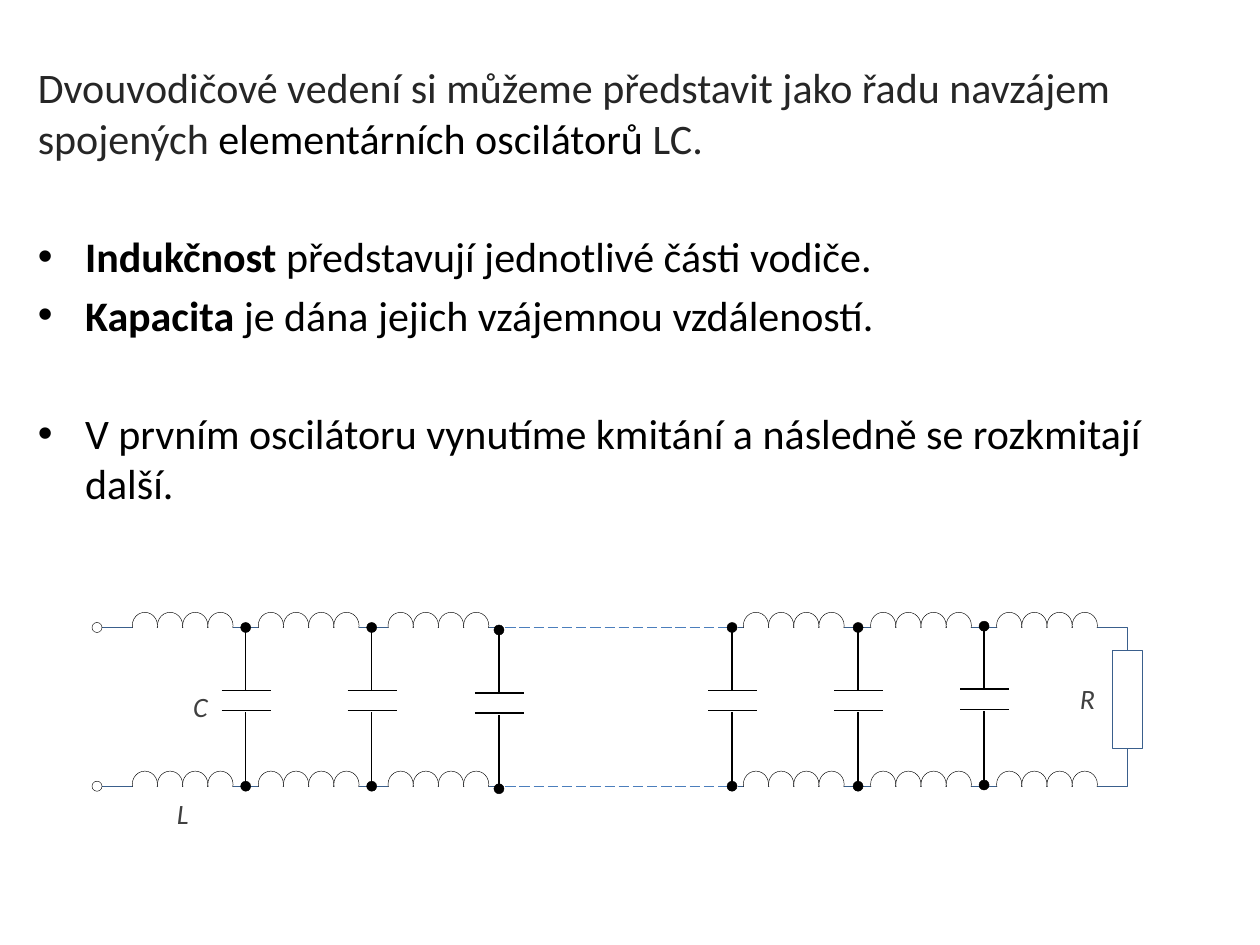
from lxml import etree
from pptx import Presentation
from pptx.dml.color import RGBColor
from pptx.enum.dml import MSO_LINE_DASH_STYLE as Dash
from pptx.enum.shapes import MSO_CONNECTOR, MSO_SHAPE as Shape
from pptx.enum.text import MSO_AUTO_SIZE, PP_ALIGN
from pptx.oxml.ns import qn
from pptx.util import Inches, Pt

BLACK, WHITE, BLUE, DASH_BLUE = "000000", "FFFFFF", "3A5F8C", "4B7EBC"
DARK, GREY = "262626", "404040"
RAIL_GAP = 1.26
COIL_XS = (1.05, 2.05, 3.08, 5.9, 6.91, 7.91)
# centre of each capacitor and its offset from the upper rail
CAPACITORS = ((1.95, 0), (2.95, 0), (3.96, 0.02), (5.81, 0), (6.81, 0), (7.81, -0.01))


def rgb(color):
    return RGBColor.from_string(color)


def add_shape(shapes, kind, box, fill, line, width):
    sp = shapes.add_shape(kind, *map(Inches, box))
    sp.shadow.inherit = False
    if fill:
        sp.fill.solid()
        sp.fill.fore_color.rgb = rgb(fill)
    else:
        sp.fill.background()
    sp.line.color.rgb = rgb(line)
    sp.line.width = Pt(width)
    return sp


def add_mask(shapes, *box):
    """White block that hides the part of the wiring behind it."""
    add_shape(shapes, Shape.RECTANGLE, box, WHITE, WHITE, 2)


def add_dot(shapes, x, y, fill):
    add_shape(shapes, Shape.OVAL, (x - 0.04, y - 0.04, 0.08, 0.08), fill, BLACK, 0.25)


def add_line(shapes, x1, y1, x2, y2, color=BLACK, width=1.0, dash=None):
    line = shapes.add_connector(MSO_CONNECTOR.STRAIGHT, *map(Inches, (x1, y1, x2, y2)))
    line.line.color.rgb = rgb(color)
    line.line.width = Pt(width)
    if dash:
        line.line.dash_style = dash
    etree.SubElement(line._element.spPr, qn("a:effectLst"))


def add_coil(shapes, x, rail_y):
    top = rail_y - 0.12
    for i in range(4):
        add_shape(shapes, Shape.OVAL, (x + 0.2 * i, top, 0.2, 0.21), WHITE, BLACK, 0.25)
    add_mask(shapes, x - 0.01, top + 0.14, 0.87, 0.11)


def add_capacitor(shapes, x, y):
    for dot_y in (y, y + RAIL_GAP):
        add_dot(shapes, x, dot_y, BLACK)
    add_line(shapes, x, y + 0.03, x, y + 1.28, width=0.75)
    add_mask(shapes, x - 0.08, y + 0.51, 0.19, 0.15)
    for plate_y in (y + 0.5, y + 0.66):
        add_line(shapes, x - 0.19, plate_y, x + 0.2, plate_y)


def add_label(shapes, text, x, y):
    tf = shapes.add_textbox(*map(Inches, (x, y, 0.68, 0.63))).text_frame
    tf.word_wrap = False
    p = tf.paragraphs[0]
    p.text = text
    p.alignment = PP_ALIGN.CENTER
    p.line_spacing = 1.5
    p.space_before = Pt(5.8)
    p.font.name, p.font.size, p.font.italic = "Calibri", Pt(16), True
    p.font.color.rgb = rgb(GREY)


def add_line_model(slide, x, y):
    """Ladder of LC cells; x is the left end of the rails, y the upper rail."""
    shapes = slide.shapes.add_group_shape().shapes
    rails = (y, y + RAIL_GAP)
    add_shape(shapes, Shape.RECTANGLE, (x, y, 8.27, RAIL_GAP), None, BLUE, 0.5)
    add_mask(shapes, x - 0.17, y - 0.03, 0.24, 1.39)
    for rail_y in rails:
        add_dot(shapes, x + 0.09, rail_y, WHITE)
        for coil_x in COIL_XS:
            add_coil(shapes, x + coil_x - 0.68, rail_y)
    add_shape(shapes, Shape.RECTANGLE, (x + 8.15, y + 0.18, 0.24, 0.78), WHITE, BLUE, 0.5)
    add_mask(shapes, x + 3.31, y - 0.06, 1.85, 1.41)
    for rail_y in rails:
        add_line(shapes, x + 3.33, rail_y, x + 5.14, rail_y, DASH_BLUE, 0.75, Dash.LONG_DASH)
    for cap_x, dy in CAPACITORS:
        add_capacitor(shapes, x + cap_x - 0.68, y + dy)
    for text, dx, dy in (("R", 7.61, 0.25), ("L", 0.43, 1.16), ("C", 0.57, 0.31)):
        add_label(shapes, text, x + dx, y + dy)


def fill_body(sp, left, top, width, height):
    sp.left, sp.top, sp.width, sp.height = map(Inches, (left, top, width, height))
    tf = sp.text_frame
    tf.auto_size = MSO_AUTO_SIZE.NONE
    # space before, then runs of (text, colour, bold)
    paragraphs = (
        (4.8, (("Dvouvodičové vedení si můžeme představit jako řadu navzájem spojených ", DARK, False),
               ("elementárních oscilátorů ", BLACK, False), ("LC.", DARK, False))),
        (38.8, (("Indukčnost ", BLACK, True),
                ("představují jednotlivé části vodiče.", BLACK, False))),
        (4.8, (("Kapacita ", BLACK, True),
               ("je dána jejich vzájemnou vzdáleností.", BLACK, False))),
        (38.8, (("V prvním oscilátoru vynutíme kmitání a následně se rozkmitají další.",
                 BLACK, False),)),
    )
    for i, (space, runs) in enumerate(paragraphs):
        p = tf.add_paragraph() if i else tf.paragraphs[0]
        p.space_before = Pt(space)
        p.font.name, p.font.size = "Calibri", Pt(24)
        for text, color, bold in runs:
            r = p.add_run()
            r.text = text
            r.font.bold = bold
            r.font.color.rgb = rgb(color)
    pPr = tf.paragraphs[0]._p.get_or_add_pPr()
    pPr.set("marL", "0")
    pPr.set("indent", "0")
    pPr.find(qn("a:spcBef")).addnext(etree.Element(qn("a:buNone")))


def main():
    prs = Presentation()
    prs.slide_width, prs.slide_height = Inches(10), Inches(7.5)
    slide = prs.slides.add_slide(prs.slide_layouts[1])
    title = slide.shapes.title._element
    title.getparent().remove(title)
    fill_body(slide.placeholders[1], 0.2, 0.44, 9.61, 3.8)
    add_line_model(slide, 0.68, 4.98)
    prs.save("out.pptx")


if __name__ == "__main__":
    main()
